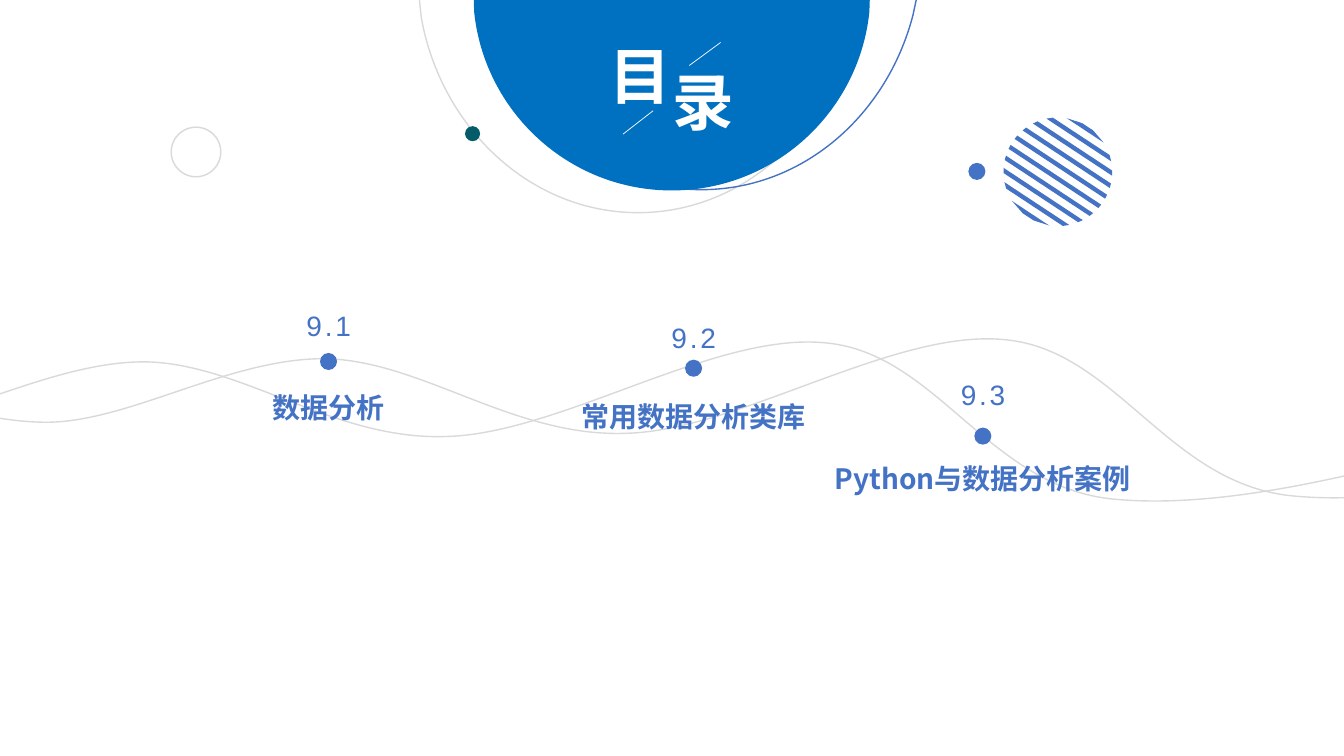
"""Build the contents slide with three chapter stops along a pair of waves."""
from math import sqrt

from lxml.etree import SubElement
from pptx import Presentation
from pptx.dml.color import RGBColor
from pptx.enum.shapes import MSO_CONNECTOR, MSO_SHAPE
from pptx.enum.text import MSO_ANCHOR, MSO_AUTO_SIZE, PP_ALIGN
from pptx.oxml.ns import qn
from pptx.util import Cm, Pt

THEME = {
    "blue": RGBColor.from_string("4472C4"),
    "disc": RGBColor.from_string("0070C0"),
    "grey": RGBColor.from_string("D9D9D9"),
    "teal": RGBColor.from_string("035C67"),
    "white": RGBColor.from_string("FFFFFF"),
    "head": {"size": Pt(44), "bold": True, "name": "Noto Sans CJK SC"},
    "label": {"size": Pt(20), "bold": True, "name": "Noto Sans CJK SC"},
    "number": {"size": Pt(20), "bold": False, "name": "Arial"},
}

deck = Presentation()
deck.slide_width, deck.slide_height = Cm(33.87), Cm(19.05)
slide = deck.slides.add_slide(deck.slide_layouts[5])
shapes = slide.shapes


def trace(start, steps, close=False):
    """Draw a freeform; a step of three points is a curve, of one a line."""
    pen = shapes.build_freeform(*map(Cm, start))
    pen.add_line_segments([tuple(map(Cm, step[-1])) for step in steps], close=close)
    shape = pen.convert_to_shape()
    for node, step in zip(list(shape.element.iter(qn("a:lnTo"))), steps):
        if len(step) == 3:
            node.tag = qn("a:cubicBezTo")
            for spot, (x, y) in enumerate(step[:2]):
                point = SubElement(node, qn("a:pt"))
                point.set("x", str(Cm(x) - shape.left))
                point.set("y", str(Cm(y) - shape.top))
                node.insert(spot, point)
    return shape


def write(box, text, style, color, wrap=False, track=0):
    """Set one centred line of text in a box."""
    frame = box.text_frame
    look = {"word_wrap": wrap, "auto_size": MSO_AUTO_SIZE.SHAPE_TO_FIT_TEXT,
            "vertical_anchor": MSO_ANCHOR.TOP}
    for key, value in look.items():
        setattr(frame, key, value)
    para = frame.paragraphs[0]
    layout = {"alignment": PP_ALIGN.CENTER, "line_spacing": 1.0, "space_before": Pt(0)}
    for key, value in layout.items():
        setattr(para, key, value)
    run = para.add_run()
    run.text = text
    run.font.color.rgb = THEME[color]
    for key, value in THEME[style].items():
        setattr(run.font, key, value)
    props = run._r.get_or_add_rPr()
    SubElement(props, qn("a:ea")).set("typeface", THEME[style]["name"])
    if track:
        props.set("spc", str(track))


parts = []

knots = [(-4.57, 8.74), (-2.82, 9.65), (-1.07, 10.59), (1.07, 10.64),
         (3.18, 10.69), (5.74, 9.02), (8.2, 9.04),
         (10.64, 9.09), (12.93, 11.02), (15.77, 10.92),
         (18.64, 10.85), (22.53, 8.28), (25.32, 8.56),
         (28.14, 8.81), (29.44, 12.22), (32.61, 12.5),
         (35.79, 12.8), (40.08, 11.56), (44.35, 10.31)]
for dx, dy in ((0, 0), (-4.52, 0.08)):
    start, *rest = [(x + dx, y + dy) for x, y in knots]
    curves = [rest[i:i + 3] for i in range(0, len(rest), 3)]
    parts.append((trace(start, curves), None, "grey"))

bowls = [(16.08, 5.36, 5.51, (5.46, 0.46), (4.95, 3.25), 2.69, None, "grey"),
         (17.68, 4.78, 5.41, (5.33, 0.38), (4.67, 2.92), 2.54, None, "blue"),
         (16.93, 4.8, 4.99, (4.98, 0.3), (4.72, 2.82), 2.59, "disc", None)]
for mid, depth, half, (rim, rim_y), (bend, bend_y), base, fill, line in bowls:
    steps = [[(mid + rim, rim_y)],
             [(mid + bend, bend_y), (mid + base, depth), (mid, depth)],
             [(mid - base, depth), (mid - bend, bend_y), (mid - rim, rim_y)],
             [(mid - half, 0)]]
    parts.append((trace((mid + half, 0), steps, fill is not None), fill, line))

mid_x, mid_y, radius = 26.66, 4.33, 1.37
pen = None
for i in range(10):
    rows = [-1.36 + 0.29 * i + 0.11 * k for k in (0, 1)]
    ends = [(sqrt(max(0, radius ** 2 - row ** 2)), row) for row in rows]
    ring = ends + [(-x, row) for x, row in reversed(ends)]
    first, *rest = [(Cm(mid_x + x), Cm(mid_y + y)) for x, y in ring]
    if pen is None:
        pen = shapes.build_freeform(*first)
    else:
        pen.move_to(*first)
    pen.add_line_segments(rest)
globe = pen.convert_to_shape()
globe.rotation = 33.4
parts.append((globe, "blue", None))

stops = [("9.1", "数据分析", 8.28, 9.11, 7.65, 9.72, 3.35),
         ("9.2", "常用数据分析类库", 17.48, 9.28, 7.95, 9.94, 6.22),
         ("9.3", "Python与数据分析案例", 24.77, 10.99, 9.39, 11.51, 8.05)]
dots = [(stop[2], stop[3], 0.43, "blue", None) for stop in stops]
dots += [(24.62, 4.32, 0.43, "blue", None),
         (11.91, 3.37, 0.38, "teal", None),
         (4.94, 3.83, 1.25, "white", "grey")]
for x, y, size, fill, line in dots:
    dot = shapes.add_shape(MSO_SHAPE.OVAL, Cm(x - size / 2), Cm(y - size / 2),
                           Cm(size), Cm(size))
    parts.append((dot, fill, line))

for part, fill, line in parts:
    part.shadow.inherit = False
    for paint, color in ((part.fill, fill), (part.line.fill, line)):
        if color:
            paint.solid()
            paint.fore_color.rgb = THEME[color]
        else:
            paint.background()
    if line:
        part.line.width = Pt(1)

for number, label, mid, _, high, low, wide in stops:
    box = shapes.add_textbox(Cm(mid - 0.81), Cm(high), Cm(1.63), Cm(1.12))
    write(box, number, "number", "blue", track=200)
    box = shapes.add_textbox(Cm(mid - wide / 2), Cm(low), Cm(wide), Cm(1.12))
    write(box, label, "label", "blue", wrap=True)

title = shapes.title
shapes.element.append(title.element)
place = {"left": Cm(15.09), "top": Cm(0.84), "width": Cm(2.08), "height": Cm(2.13)}
for key, value in place.items():
    setattr(title, key, value)
write(title, "目", "head", "white")
write(shapes.add_textbox(Cm(16.69), Cm(1.49), Cm(2.08), Cm(2.13)), "录", "head", "white")

for ends in ((15.7, 3.38, 16.46, 2.79), (17.37, 1.65, 18.16, 1.07)):
    slash = shapes.add_connector(MSO_CONNECTOR.STRAIGHT, *map(Cm, ends))
    slash.line.color.rgb = THEME["white"]
    slash.line.width = Pt(0.5)
    SubElement(slash.element.spPr, qn("a:effectLst"))

deck.save("out.pptx")
